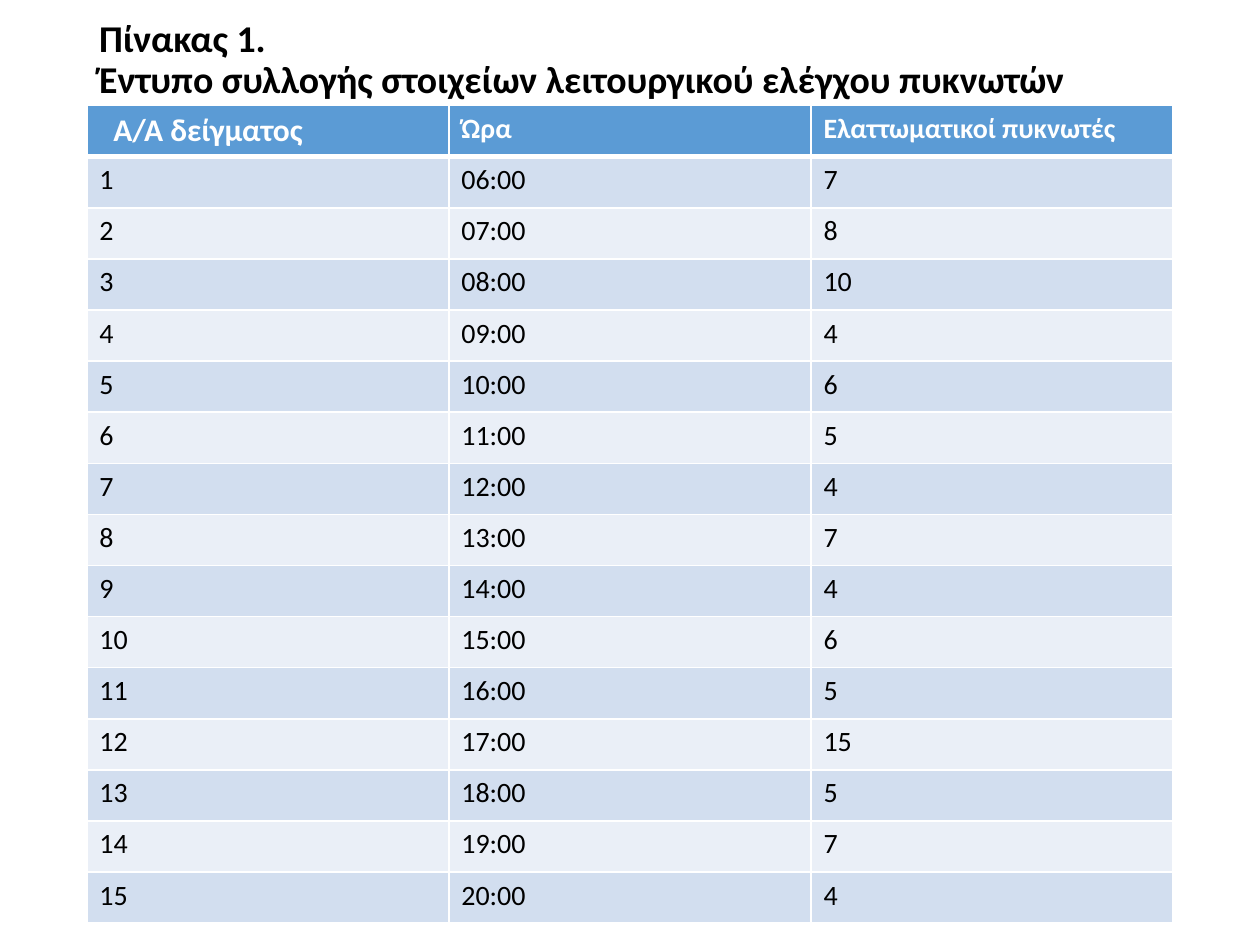
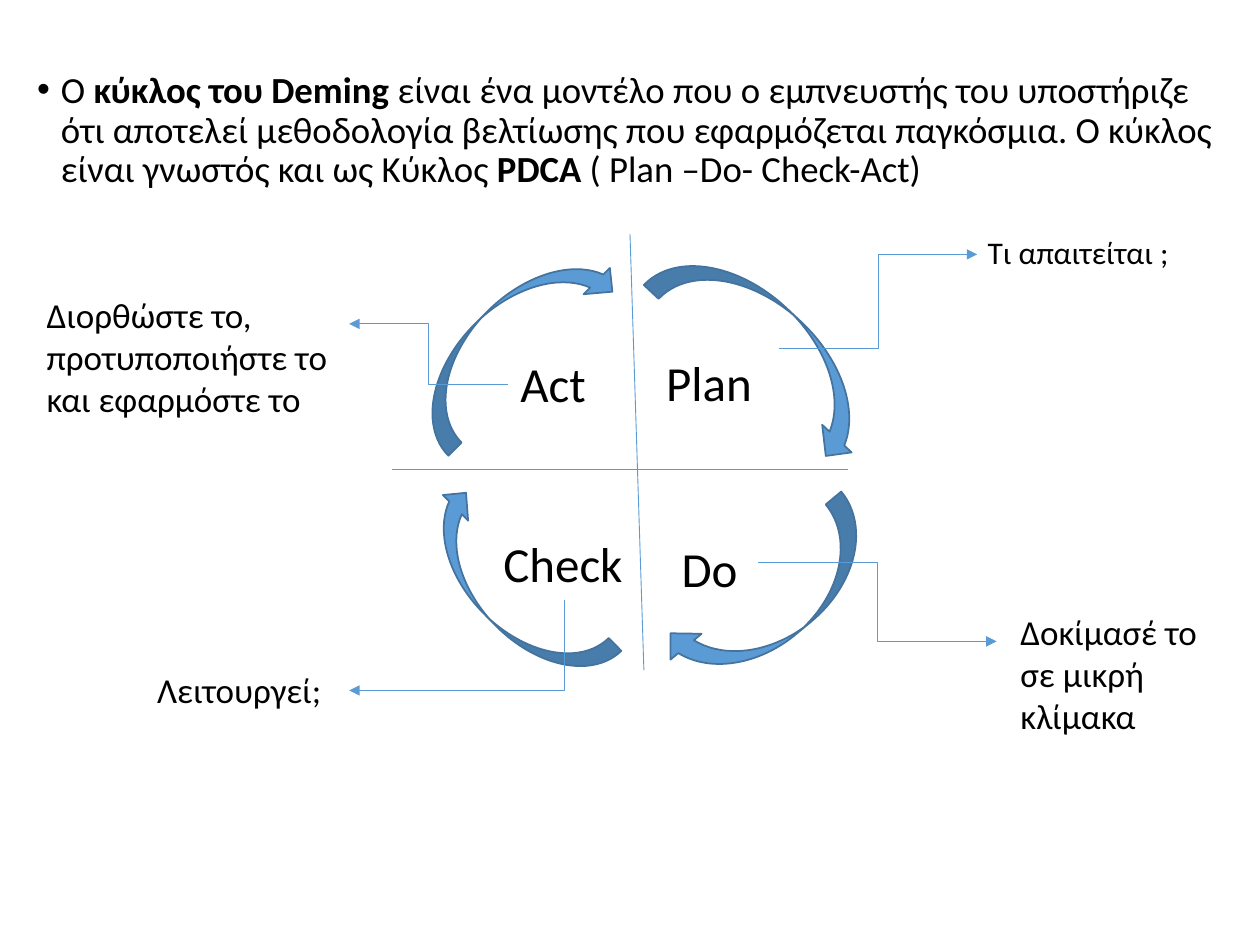
from dataclasses import dataclass
from typing import NamedTuple

from lxml import etree
from pptx import Presentation
from pptx.dml.color import RGBColor
from pptx.enum.shapes import MSO_CONNECTOR, MSO_SHAPE
from pptx.enum.text import MSO_ANCHOR, MSO_AUTO_SIZE
from pptx.oxml.ns import qn
from pptx.slide import Slide
from pptx.util import Cm, Pt

STRAIGHT = MSO_CONNECTOR.STRAIGHT
ELBOW = MSO_CONNECTOR.ELBOW
CURVED_ARROW = MSO_SHAPE.CURVED_DOWN_ARROW
MIDDLE = MSO_ANCHOR.MIDDLE
TOP = MSO_ANCHOR.TOP
GROW = MSO_AUTO_SIZE.SHAPE_TO_FIT_TEXT
FIXED = MSO_AUTO_SIZE.NONE


@dataclass(frozen=True)
class Theme:
    font: str = "Calibri"
    ink: str = "000000"
    paper: str = "FFFFFF"
    accent: str = "5B9BD5"
    outline: str = "43739E"
    bands: tuple[str, str] = ("D2DEEF", "EAEFF7")
    title: float = 21.6
    body: float = 21
    stage: float = 28
    note: float = 20
    small_note: float = 18
    first_heading: float = 18
    cell: float = 16
    hairline: float = 0.5
    border: float = 1
    header_rule: float = 3
    line_spacing: float = 0.9


THEME = Theme()


class Box(NamedTuple):
    left: float
    top: float
    width: float
    height: float


class Span(NamedTuple):
    text: str
    bold: bool = False


class Label(NamedTuple):
    text: str
    box: Box
    size: float


class Arc(NamedTuple):
    box: Box
    rotation: float


class Link(NamedTuple):
    start: tuple[float, float]
    end: tuple[float, float]


TITLE_LINES = ("Πίνακας 1.", "Έντυπο συλλογής στοιχείων λειτουργικού ελέγχου πυκνωτών")
HEADINGS = ("Α/Α δείγματος", "Ώρα", "Ελαττωματικοί πυκνωτές")
DEFECTS = (7, 8, 10, 4, 6, 5, 4, 7, 4, 6, 5, 15, 5, 7, 4)
FIRST_HOUR = 6

DEFINITION = (
    Span("Ο "),
    Span("κύκλος του Deming ", True),
    Span("είναι ένα μοντέλο που ο εμπνευστής του υποστήριζε ότι αποτελεί "
         "μεθοδολογία βελτίωσης που εφαρμόζεται παγκόσμια. Ο κύκλος είναι "
         "γνωστός και ως Κύκλος "),
    Span("PDCA", True),
    Span(" ( Plan –Do- Check-Act)"),
)
ARCS = (
    Arc(Box(12.8, 6.2, 5.44, 1.63), 43.2),
    Arc(Box(7.9, 11.18, 4.83, 1.45), 225.5),
    Arc(Box(13.16, 11.28, 4.88, 1.63), 140.3),
    Arc(Box(7.77, 6.12, 5.05, 1.5), 315),
)
AXES = (Link((12.7, 4.72), (12.98, 13.51)), Link((7.9, 9.47), (17.09, 9.47)))
STAGES = (
    Label("Plan", Box(13.18, 6.98, 5.79, 1.45), THEME.stage),
    Label("Do", Box(13.49, 10.74, 2.59, 1.45), THEME.stage),
    Label("Check", Box(9.9, 10.64, 2.95, 1.45), THEME.stage),
    Label("Act", Box(10.24, 7.01, 2.59, 1.45), THEME.stage),
)
STEPPED_LINKS = (
    Link((15.7, 7.02), (19.7, 5.13)),
    Link((15.29, 11.33), (20.09, 12.93)),
    Link((10.24, 7.75), (7.04, 6.53)),
)
CHECK_LINK = Link((11.38, 12.09), (7.04, 13.92))
NOTES = (
    Label("Τι απαιτείται ;", Box(19.66, 4.57, 4.19, 1.02), THEME.small_note),
    Label("Δοκίμασέ το σε μικρή κλίμακα", Box(20.32, 12.19, 4.39, 2.82), THEME.note),
    Label("Λειτουργεί;", Box(2.92, 13.36, 4.65, 1.12), THEME.note),
    Label("Διορθώστε το, προτυποποιήστε το και εφαρμόστε το",
          Box(0.69, 5.79, 6.43, 2.82), THEME.note),
)


def rgb(colour: str) -> RGBColor:
    return RGBColor.from_string(colour)


def lengths(values: tuple[float, ...]) -> list[Cm]:
    return [Cm(value) for value in values]


def add_run(paragraph, span: Span, size: float, colour: str = THEME.ink) -> None:
    run = paragraph.add_run()
    run.text = span.text
    run.font.name = THEME.font
    run.font.size = Pt(size)
    run.font.bold = span.bold
    run.font.color.rgb = rgb(colour)


def add_text_area(slide: Slide, box: Box, auto_size=FIXED, anchor=TOP):
    frame = slide.shapes.add_textbox(*lengths(box)).text_frame
    frame.word_wrap = True
    frame.auto_size = auto_size
    frame.vertical_anchor = anchor
    return frame.paragraphs[0]


def add_label(slide: Slide, label: Label) -> None:
    add_run(add_text_area(slide, label.box, GROW), Span(label.text), label.size)


def add_title(slide: Slide) -> None:
    paragraph = add_text_area(slide, Box(1.75, 0.33, 21.9, 1.8), anchor=MIDDLE)
    paragraph.line_spacing = THEME.line_spacing
    first, second = TITLE_LINES
    add_run(paragraph, Span(first, True), THEME.title)
    paragraph.add_line_break()
    add_run(paragraph, Span(second, True), THEME.title)


def set_border(cell, side: str, width: float) -> None:
    line = etree.SubElement(cell._tc.get_or_add_tcPr(), qn(f"a:ln{side}"), w=str(Pt(width)))
    fill = etree.SubElement(line, qn("a:solidFill"))
    etree.SubElement(fill, qn("a:srgbClr"), val=THEME.paper)


def add_cell(cell, text: str, row: int, size: float) -> None:
    is_header = row == 0
    widths = {
        "L": THEME.border,
        "R": THEME.border,
        "T": THEME.header_rule if row == 1 else THEME.border,
        "B": THEME.header_rule if is_header else THEME.border,
    }
    for side, width in widths.items():
        set_border(cell, side, width)
    cell.fill.solid()
    cell.fill.fore_color.rgb = rgb(THEME.accent if is_header else THEME.bands[(row - 1) % 2])
    add_run(cell.text_frame.paragraphs[0], Span(text, is_header), size,
            THEME.paper if is_header else THEME.ink)


def add_samples_table(slide: Slide) -> None:
    samples = [(str(index + 1), f"{FIRST_HOUR + index:02}:00", str(count))
               for index, count in enumerate(DEFECTS)]
    rows = [HEADINGS, *samples]
    box = Box(1.75, 2.13, 21.9, 16.48)
    table = slide.shapes.add_table(len(rows), len(HEADINGS), *lengths(box)).table
    for table_row in table.rows:
        table_row.height = Cm(box.height / len(rows))
    for row, values in enumerate(rows):
        for column, text in enumerate(values):
            size = THEME.first_heading if row == column == 0 else THEME.cell
            add_cell(table.cell(row, column), text, row, size)
    first_heading = table.cell(0, 0).text_frame.paragraphs[0]
    first_heading._p.get_or_add_pPr().set("marL", str(Cm(0.28)))


def add_definition(slide: Slide) -> None:
    paragraph = add_text_area(slide, Box(0.5, 1.32, 24.23, 15.82))
    paragraph.line_spacing = THEME.line_spacing
    paragraph.space_before = Pt(7.5)
    properties = paragraph._p.get_or_add_pPr()
    properties.set("marL", str(Cm(0.48)))
    properties.set("indent", str(Cm(-0.48)))
    etree.SubElement(properties, qn("a:buFont"), typeface="Arial")
    etree.SubElement(properties, qn("a:buChar"), char="•")
    for span in DEFINITION:
        add_run(paragraph, span, THEME.body)


def add_arc(slide: Slide, arc: Arc) -> None:
    arrow = slide.shapes.add_shape(CURVED_ARROW, *lengths(arc.box))
    arrow.rotation = arc.rotation
    arrow.shadow.inherit = False
    arrow.fill.solid()
    arrow.fill.fore_color.rgb = rgb(THEME.accent)
    arrow.line.color.rgb = rgb(THEME.outline)
    arrow.line.width = Pt(THEME.border)


def add_link(slide: Slide, link: Link, kind=STRAIGHT):
    connector = slide.shapes.add_connector(kind, *lengths(link.start + link.end))
    connector.line.color.rgb = rgb(THEME.accent)
    connector.line.width = Pt(THEME.hairline)
    properties = connector._element.spPr
    if kind == ELBOW:
        etree.SubElement(properties.find(qn("a:ln")), qn("a:tailEnd"), type="triangle")
    etree.SubElement(properties, qn("a:effectLst"))
    return connector


def add_corner_link(slide: Slide, link: Link) -> None:
    (x1, y1), (x2, y2) = link
    middle_x, middle_y = (x1 + x2) / 2, (y1 + y2) / 2
    half_run, half_drop = abs(x2 - x1) / 2, abs(y2 - y1) / 2
    unrotated = Link((middle_x - half_drop, middle_y - half_run),
                     (middle_x + half_drop, middle_y + half_run))
    properties = add_link(slide, unrotated, ELBOW)._element.spPr
    properties.find(qn("a:xfrm")).set("rot", str(90 * 60000))
    properties.find(qn("a:prstGeom")).set("prst", "bentConnector2")


def build_samples_slide(slide: Slide) -> None:
    add_title(slide)
    add_samples_table(slide)


def build_cycle_slide(slide: Slide) -> None:
    add_definition(slide)
    for arc in ARCS:
        add_arc(slide, arc)
    for axis in AXES:
        add_link(slide, axis)
    for stage in STAGES:
        add_label(slide, stage)
    for link in STEPPED_LINKS:
        add_link(slide, link, ELBOW)
    add_corner_link(slide, CHECK_LINK)
    for note in NOTES:
        add_label(slide, note)


def main() -> None:
    deck = Presentation()
    deck.slide_width, deck.slide_height = Cm(25.4), Cm(19.05)
    blank = deck.slide_layouts[6]
    for build in (build_samples_slide, build_cycle_slide):
        build(deck.slides.add_slide(blank))
    deck.save("out.pptx")


if __name__ == "__main__":
    main()
